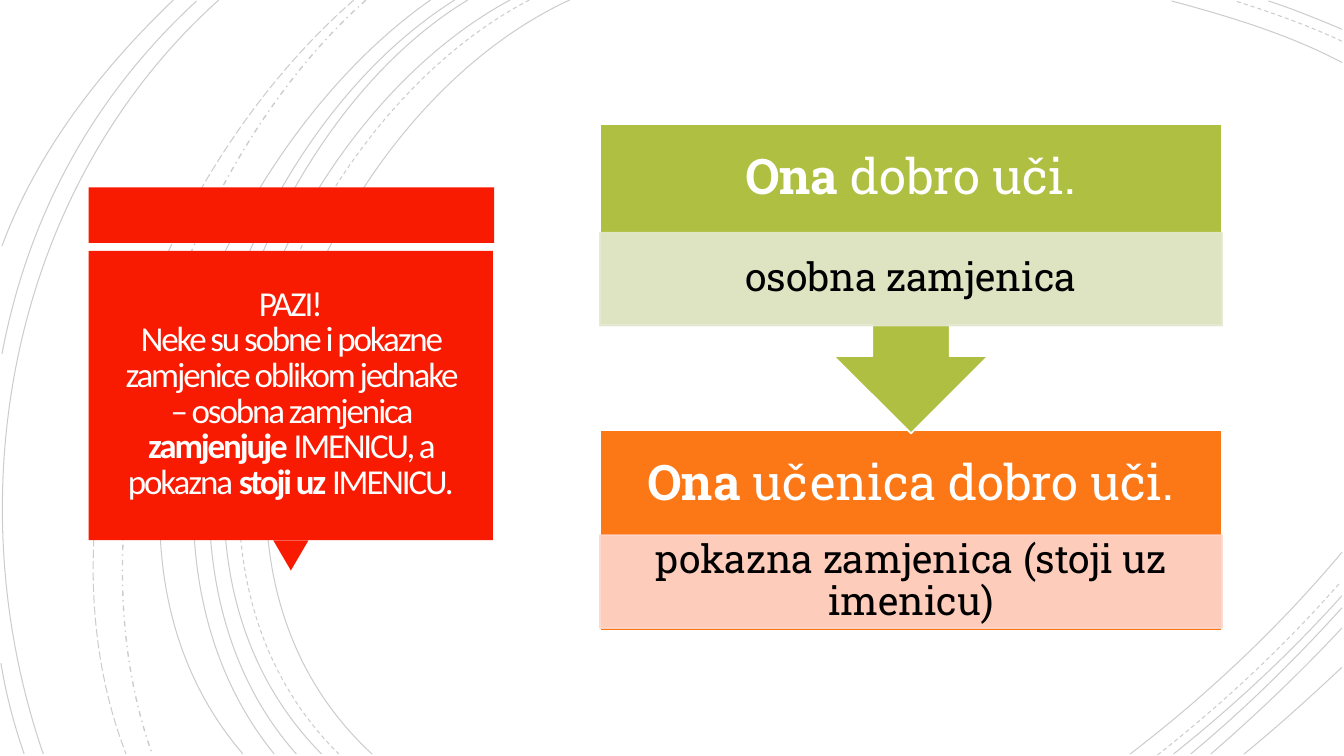
"""Build a slide contrasting personal and demonstrative pronouns."""
from lxml.etree import SubElement
from pptx import Presentation
from pptx.dml.color import RGBColor
from pptx.enum.dml import MSO_LINE
from pptx.enum.shapes import MSO_SHAPE
from pptx.enum.text import MSO_ANCHOR, PP_ALIGN
from pptx.oxml.ns import qn
from pptx.util import Pt

SCALE = 9144
SLIDE_SIZE = (1333, 750)
THEME = {
    "red": "F81B02", "orange": "FC7715", "pale orange": "FED6CC",
    "green": "AFBF41", "pale green": "E4E8CF",
    "white": "FFFFFF", "title text": "FFFEFF", "black": "000000",
    "title font": "Calibri", "step font": "Roboto Slab",
    "title size": 25, "heading size": 35, "detail size": 28,
    "outline": 1.25, "arc width": 0.75, "arc opacity": 20, "pale opacity": 90,
}

WARNING = [
    ("PAZI!\n", False),
    ("Neke su sobne i pokazne zamjenice oblikom jednake – osobna zamjenica ", False),
    ("zamjenjuje", True),
    (" IMENICU, a pokazna ", False),
    ("stoji uz ", True),
    ("IMENICU.", False),
]
STEPS = [
    {"shape": MSO_SHAPE.RECTANGLE, "top": 427, "height": 199, "detail offset": 104,
     "rotation": 0, "fill": "orange", "pale": "pale orange",
     "heading": [("Ona", True), (" učenica dobro uči.", False)],
     "detail": [("pokazna zamjenica (stoji uz imenicu)", False)]},
    {"shape": MSO_SHAPE.UP_ARROW_CALLOUT, "top": 123, "height": 307, "detail offset": 108,
     "rotation": 180, "fill": "green", "pale": "pale green",
     "heading": [("Ona", True), (" dobro uči.", False)],
     "detail": [("osobna zamjenica", False)]},
]
STEP_LEFT, STEP_WIDTH, HEADING_HEIGHT, DETAIL_HEIGHT = 595, 617, 108, 92

RED_PARTS = [
    (MSO_SHAPE.RECTANGLE, (88, 186, 402, 55), 0),
    (MSO_SHAPE.ISOSCELES_TRIANGLE, (271, 536, 35, 30), 180),
    (MSO_SHAPE.RECTANGLE, (88, 249, 401, 287), 0),
]
ARCS = {
    MSO_LINE.SOLID: [
        ((565, 0), (315, 115), (143, 540), (369, 748)),
        ((1331, 62), (1278, 34), (1218, 16), (1162, 1)),
        ((1121, 748), (1197, 690), (1269, 622), (1331, 548)),
        ((506, 0), (270, 127), (110, 537), (319, 748)),
        ((1331, 29), (1307, 19), (1283, 9), (1258, 1)),
        ((1164, 748), (1223, 701), (1280, 648), (1331, 591)),
        ((464, 0), (244, 133), (110, 541), (294, 748)),
        ((1181, 748), (1234, 704), (1284, 655), (1331, 603)),
        ((451, 0), (231, 138), (97, 533), (272, 748)),
        ((1201, 748), (1246, 709), (1290, 667), (1331, 623)),
        ((427, 0), (217, 147), (53, 529), (241, 748)),
        ((1234, 748), (1267, 721), (1299, 692), (1331, 662)),
        ((217, 0), (11, 185), (-46, 490), (43, 748)),
        ((195, 1), (92, 96), (28, 214), (2, 351)),
        ((1, 658), (6, 689), (14, 719), (24, 748)),
        ((172, 0), (100, 69), (37, 150), (2, 244)),
    ],
    MSO_LINE.DASH: [
        ((525, 0), (285, 125), (123, 537), (336, 748)),
        ((1331, 41), (1297, 25), (1260, 12), (1225, 1)),
        ((1148, 749), (1213, 698), (1275, 640), (1330, 577)),
    ],
    MSO_LINE.DASH_DOT: [((363, 0), (176, 166), (65, 509), (151, 748))],
    MSO_LINE.LONG_DASH: [((351, 0), (157, 169), (29, 499), (125, 748))],
}


def color(name):
    return RGBColor.from_string(THEME[name])


def apply(target, values):
    for name, value in values.items():
        setattr(target, name, value)


def set_opacity(shape, percent):
    for element in shape._element.spPr.iter(qn("a:srgbClr")):
        SubElement(element, qn("a:alpha"), val=str(percent * 1000))


def add_arc(slide, points, dash):
    builder = slide.shapes.build_freeform(*points[0], scale=SCALE)
    builder.add_line_segments(points[1:], close=False)
    shape = builder.convert_to_shape()
    segments = list(shape._element.iter(qn("a:lnTo")))
    curve = SubElement(segments[0].getparent(), qn("a:cubicBezTo"))
    for segment in segments:
        curve.append(segment[0])
        segment.getparent().remove(segment)
    shape.shadow.inherit = False
    shape.fill.background()
    shape.line.color.rgb = color("black")
    width = 1 if dash == MSO_LINE.DASH_DOT else THEME["arc width"]
    apply(shape.line, {"width": Pt(width), "dash_style": dash})
    set_opacity(shape, THEME["arc opacity"])


def add_block(slide, kind, box, fill, line=None, rotation=0):
    shape = slide.shapes.add_shape(kind, *(value * SCALE for value in box))
    apply(shape, {"rotation": rotation})
    shape.shadow.inherit = False
    shape.fill.solid()
    shape.fill.fore_color.rgb = color(fill)
    if line:
        shape.line.color.rgb = color(line)
        shape.line.width = Pt(THEME["outline"])
    else:
        shape.line.fill.background()
    return shape


def write(shape, parts, style, ink, margins, line_spacing=0.9, tracking=0):
    side, edge = (value * SCALE for value in margins)
    apply(shape.text_frame, {
        "word_wrap": True, "vertical_anchor": MSO_ANCHOR.MIDDLE,
        "margin_left": side, "margin_right": side,
        "margin_top": edge, "margin_bottom": edge,
    })
    paragraph = shape.text_frame.paragraphs[0]
    apply(paragraph, {"alignment": PP_ALIGN.CENTER, "line_spacing": line_spacing})
    font_name = THEME["title font" if style == "title" else "step font"]
    for text, bold in parts:
        run = paragraph.add_run()
        run.text = text.rstrip("\n")
        apply(run.font, {"name": font_name, "size": Pt(THEME[f"{style} size"]), "bold": bold})
        run.font.color.rgb = color(ink)
        if tracking:
            run._r.get_or_add_rPr().set("spc", str(tracking))
        if text.endswith("\n"):
            paragraph.add_line_break()


def add_text(slide, box):
    return slide.shapes.add_textbox(*(value * SCALE for value in box))


def add_step(slide, step):
    top = step["top"]
    add_block(slide, step["shape"], (STEP_LEFT, top, STEP_WIDTH, step["height"]),
              step["fill"], "white", step["rotation"])
    heading = add_text(slide, (STEP_LEFT, top, STEP_WIDTH, HEADING_HEIGHT))
    write(heading, step["heading"], "heading", "white", (27, 27))
    detail_box = (STEP_LEFT, top + step["detail offset"], STEP_WIDTH, DETAIL_HEIGHT)
    detail = add_block(slide, MSO_SHAPE.RECTANGLE, detail_box, step["pale"], step["pale"])
    set_opacity(detail, THEME["pale opacity"])
    write(detail, step["detail"], "detail", "black", (22, 4))


def main():
    presentation = Presentation()
    width, height = SLIDE_SIZE
    apply(presentation, {"slide_width": width * SCALE, "slide_height": height * SCALE})
    slide = presentation.slides.add_slide(presentation.slide_layouts[6])
    for dash, arcs in ARCS.items():
        for points in arcs:
            add_arc(slide, points, dash)
    for kind, box, rotation in RED_PARTS:
        add_block(slide, kind, box, "red", rotation=rotation)
    write(add_text(slide, (97, 257, 383, 269)), WARNING, "title", "title text",
          (25, 25), line_spacing=0.85, tracking=-150)
    for step in STEPS:
        add_step(slide, step)
    presentation.save("out.pptx")


if __name__ == "__main__":
    main()
